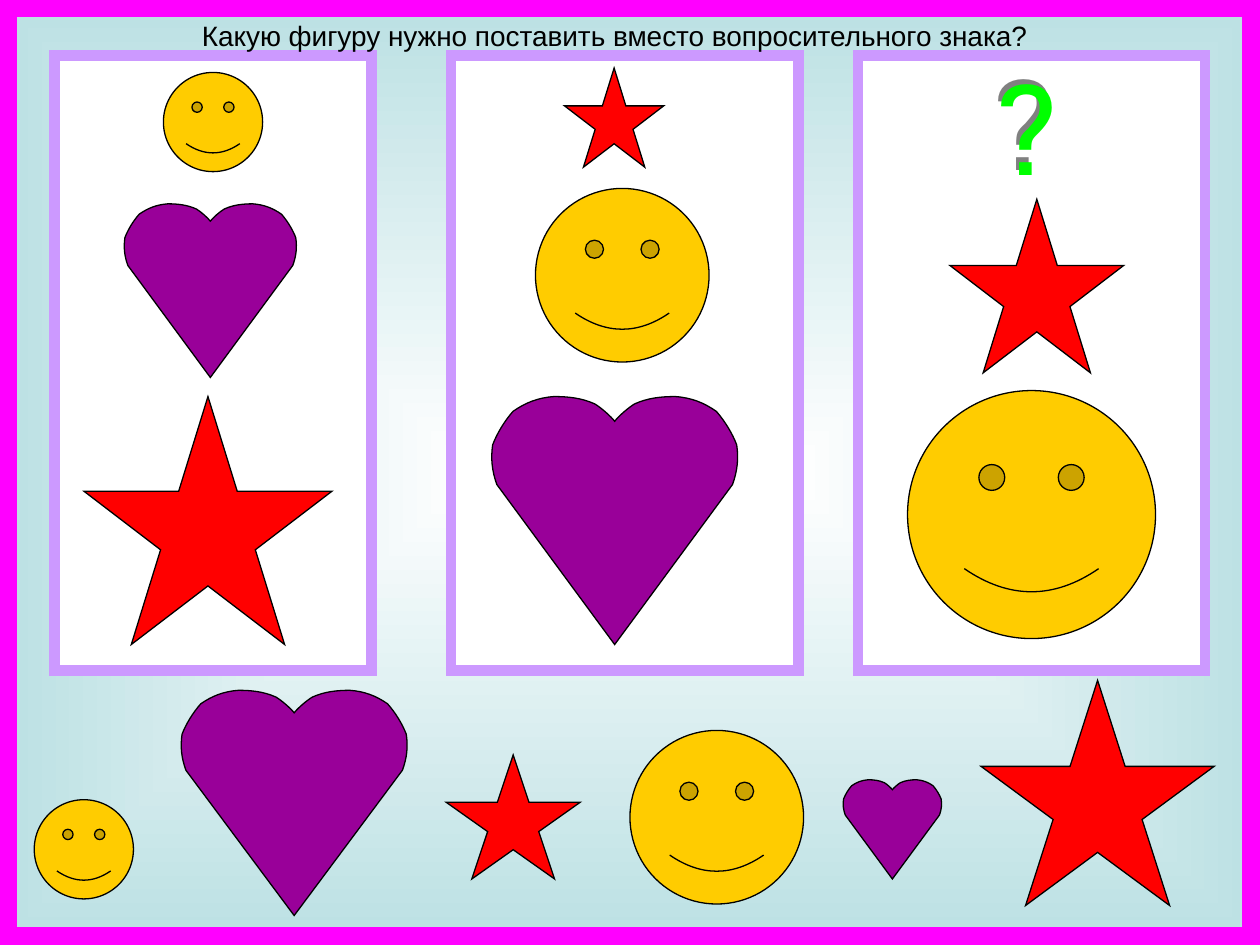
from pptx import Presentation
from pptx import util as u
from pptx.dml.color import RGBColor
from pptx.enum import shapes, text
from pptx.oxml import parse_xml
from pptx.oxml.ns import nsdecls, qn

PRESETS = {
    "face": (shapes.MSO_SHAPE.SMILEY_FACE, "FFCC00"),
    "star": (shapes.MSO_SHAPE.STAR_5_POINT, "FF0000"),
}
HEART_HALF = [
    (50, 10), (48.5, 8), (44.5, 4.5), (42, 3), (36.5, 0.5), (31, 0), (25.5, 0),
    (19, 0.5), (14, 2.5), (9, 6), (5.5, 10), (2.5, 15), (0.8, 19.5),
    (0, 25), (0.5, 30), (2.5, 35.5),
]
SMALL, MEDIUM, LARGE = 56.7, 99.2, 141.7


def color(value):
    """Turn a hex string into a colour."""
    return RGBColor.from_string(value)


def paint(shape, fill, line, width):
    """Set the fill and mitred outline of a shape; a fill of None is empty."""
    shape.shadow.inherit = False
    if fill:
        shape.fill.solid()
        shape.fill.fore_color.rgb = color(fill)
    else:
        shape.fill.background()
    shape.line.color.rgb = color(line)
    shape.line.width = u.Pt(width)
    shape._element.spPr.find(qn("a:ln")).append(
        parse_xml(f'<a:miter {nsdecls("a")} lim="800000"/>'))


def add_rectangle(page, box, fill, line, width):
    """Add an outlined rectangle."""
    shape = page.shapes.add_shape(shapes.MSO_SHAPE.RECTANGLE, *map(u.Pt, box))
    paint(shape, fill, line, width)


def points_xml(points):
    """Write percentages as path points."""
    return "".join(f'<a:pt x="{round(x * 10)}" y="{round(y * 10)}"/>' for x, y in points)


def curves_xml(points):
    """Write points as cubic curves, three points to each."""
    return "".join(f"<a:cubicBezTo>{points_xml(points[i:i + 3])}</a:cubicBezTo>"
                   for i in range(0, len(points), 3))


def add_heart(page, box):
    """Draw a symmetrical curved heart that fills the box."""
    left, top, width, height = box
    right, bottom = left + width, top + height
    builder = page.shapes.build_freeform(u.Pt(left), u.Pt(top))
    builder.add_line_segments(
        [(u.Pt(x), u.Pt(y)) for x, y in ((right, top), (right, bottom), (left, bottom))])
    shape = builder.convert_to_shape()
    mirrored = [(100 - x, y) for x, y in reversed(HEART_HALF)]
    outline = shape._element.find(".//" + qn("a:path"))
    outline.getparent().replace(outline, parse_xml(
        f'<a:path {nsdecls("a")} w="1000" h="1000">'
        f"<a:moveTo>{points_xml(HEART_HALF[:1])}</a:moveTo>{curves_xml(HEART_HALF[1:])}"
        f"<a:lnTo>{points_xml([(50, 100)])}</a:lnTo>"
        f"<a:lnTo>{points_xml(mirrored[:1])}</a:lnTo>{curves_xml(mirrored[1:])}"
        "<a:close/></a:path>"))
    paint(shape, "990099", "000000", 0.75)


def add_figures(page, box, figures):
    """Place figures by their offsets from the corner of the box."""
    for kind, x, y, width, height in figures:
        place = (box[0] + x, box[1] + y, width, height)
        if kind == "heart":
            add_heart(page, place)
        else:
            preset, fill = PRESETS[kind]
            shape = page.shapes.add_shape(preset, *map(u.Pt, place))
            paint(shape, fill, "000000", 0.75)


def add_panel(page, box, figures):
    """Add a framed panel with a column of figures."""
    add_rectangle(page, box, "FFFFFF", "CC99FF", 6)
    add_figures(page, box, [(kind, x, y, size, size) for kind, x, y, size in figures])


def add_question(page, box):
    """Add the question mark with its grey shadow."""
    shape = page.shapes.add_textbox(*map(u.Pt, box))
    shape.text_frame.word_wrap = True
    shape.text_frame.text = "?"
    font = shape.text_frame.paragraphs[0].runs[0].font
    font.name, font.size = "Roboto Slab", u.Pt(72)
    font.color.rgb = color("00FF00")
    shape._element.spPr.append(parse_xml(
        f'<a:effectLst {nsdecls("a")}><a:outerShdw dist="45720" dir="14160000" algn="ctr">'
        '<a:srgbClr val="808080"/></a:outerShdw></a:effectLst>'))


def add_title(page, box):
    """Bring the title placeholder to the front of the box and format it."""
    title = page.shapes.title
    page.shapes._spTree.append(title._element)
    title.left, title.top, title.width, title.height = map(u.Pt, box)
    frame = title.text_frame
    frame.text = "Какую фигуру нужно поставить вместо вопросительного знака?"
    frame.word_wrap = True
    frame.auto_size = text.MSO_AUTO_SIZE.NONE
    frame.vertical_anchor = text.MSO_ANCHOR.TOP
    para = frame.paragraphs[0]
    para.alignment = text.PP_ALIGN.CENTER
    font = para.runs[0].font
    font.name, font.size = "Arial", u.Pt(16)
    font.color.rgb = color("000000")


def set_background(page):
    """Fill the page with a gradient that is white at its centre."""
    fill = page.background.fill
    fill.gradient()
    for stop, value in zip(fill.gradient_stops, ("FFFFFF", "BBE0E3")):
        stop.color.rgb = color(value)
    linear = page._element.find(".//" + qn("a:lin"))
    linear.getparent().replace(linear, parse_xml(
        f'<a:path {nsdecls("a")} path="shape">'
        '<a:fillToRect l="50000" t="50000" r="50000" b="50000"/></a:path>'))


def main():
    """Build and save the puzzle."""
    deck = Presentation()
    deck.slide_width, deck.slide_height = u.Pt(720), u.Pt(540)
    page = deck.slides.add_slide(deck.slide_layouts[5])
    set_background(page)
    add_panel(page, (490.3, 31.7, 198.4, 351.4), [
        ("star", 52.6, 82.2, MEDIUM), ("face", 28.3, 191.5, LARGE)])
    add_panel(page, (257.8, 31.7, 198.4, 351.4), [
        ("star", 64.8, 7.2, SMALL), ("face", 48.2, 76, MEDIUM), ("heart", 22.6, 194.9, LARGE)])
    add_panel(page, (31, 31.7, 181.4, 351.6), [
        ("face", 62.4, 9.7, SMALL), ("heart", 39.6, 84.8, MEDIUM), ("star", 17, 194.9, LARGE)])
    add_figures(page, (0, 388.8), [
        ("face", 19.6, 68.2, SMALL, SMALL),
        ("heart", 103, 5.7, 130.2, 128.7),
        ("star", 255, 42.6, 76.5, 70.9),
        ("face", 360, 28.6, MEDIUM, MEDIUM),
        ("heart", 481.6, 56.8, SMALL, SMALL),
        ("star", 560.6, 0, 133.2, 128.7)])
    add_rectangle(page, (0, 0, 720, 540), None, "FF00FF", 20)
    add_question(page, (563, 24.6, 67.7, 93.6))
    add_title(page, (79.2, 7.2, 544.3, 26.6))
    deck.save("out.pptx")


if __name__ == "__main__":
    main()
